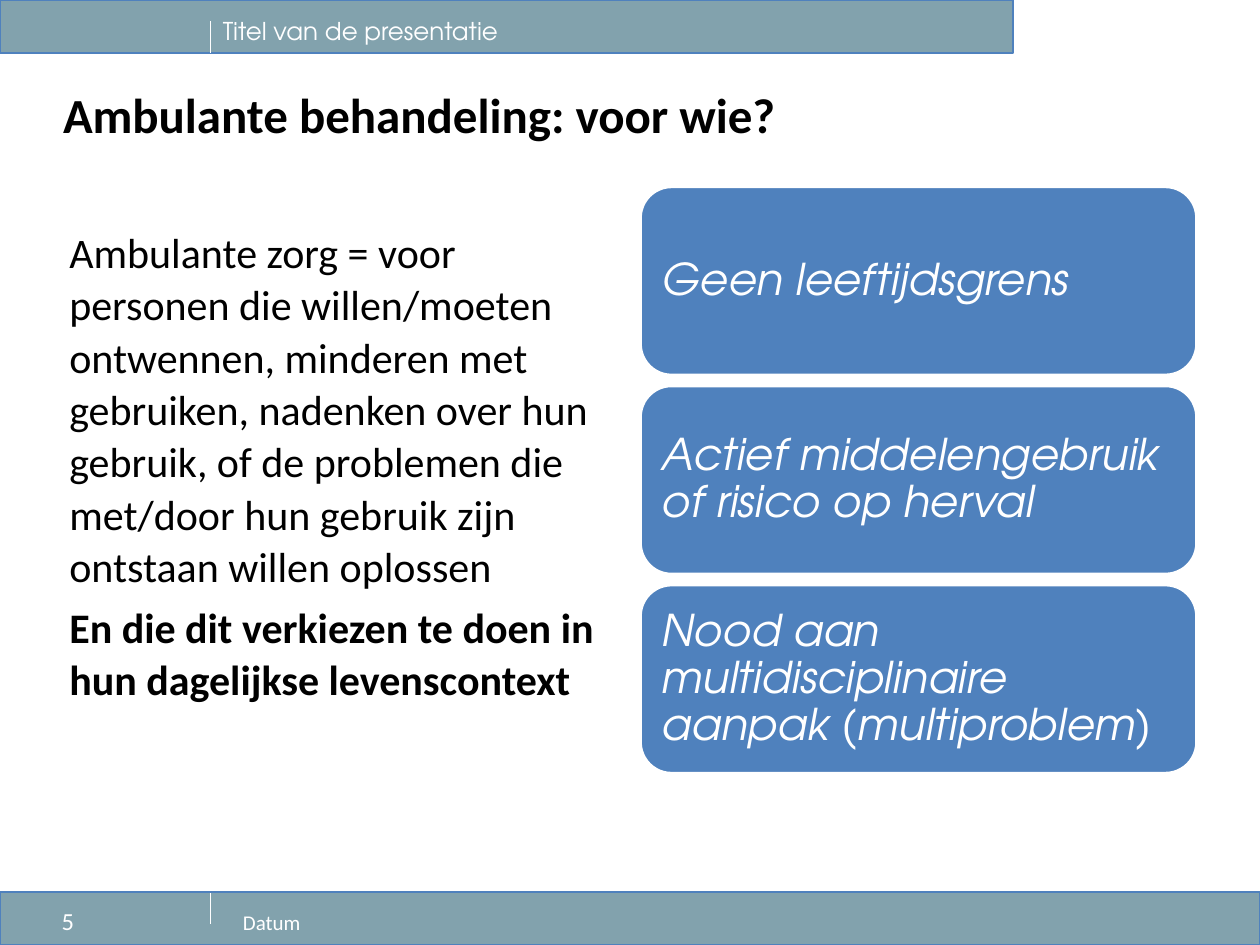
from pptx import Presentation
from pptx.dml.color import RGBColor as Rgb
from pptx.enum.shapes import MSO_CONNECTOR as Conn, MSO_SHAPE as Geo
from pptx.enum.text import MSO_ANCHOR as Anchor, MSO_AUTO_SIZE as Fit, PP_ALIGN as Align
from pptx.oxml.ns import qn
from pptx.util import Inches, Pt
from lxml.etree import SubElement

HUES = {"bar": "82A2AD", "blue": "4F81BD", "white": "FFFFFF", "black": "000000"}
SANS = "Calibri"
GEO = "TeX Gyre Adventor"


def hue(name):
    return Rgb.from_string(HUES[name])


def write(par, text, size=24, face=SANS, color="black", bold=False,
          slant=False, lead=1.0, before=0, after=0):
    props = par._p.get_or_add_pPr()
    props.set("marL", "0")
    props.set("indent", "0")
    SubElement(props, qn("a:buNone"))
    par.alignment = Align.LEFT
    par.line_spacing = lead
    par.space_before, par.space_after = Pt(before), Pt(after)
    run = par.add_run()
    run.text = text
    font = run.font
    font.name, font.size = face, Pt(size)
    font.bold, font.italic = bold, slant
    font.color.rgb = hue(color)


class Page:
    def __init__(self, slide):
        self.slide = slide
        self.items = slide.shapes

    def frame(self, shape, pad, anchor=Anchor.TOP, wrap=True):
        frame = shape.text_frame
        frame.auto_size = Fit.NONE
        frame.word_wrap = wrap
        frame.vertical_anchor = anchor
        (frame.margin_left, frame.margin_top,
         frame.margin_right, frame.margin_bottom) = map(Inches, pad)
        return frame

    def block(self, geo, box, fill, line, width):
        shape = self.items.add_shape(geo, *map(Inches, box))
        shape.shadow.inherit = False
        shape.fill.solid()
        shape.fill.fore_color.rgb = hue(fill)
        shape.line.color.rgb = hue(line)
        shape.line.width = Pt(width)
        return shape

    def rule(self, ends, color, width):
        line = self.items.add_connector(Conn.STRAIGHT, *map(Inches, ends))
        line.line.color.rgb = hue(color)
        line.line.width = Pt(width)
        SubElement(line._element.spPr, qn("a:effectLst"))

    def label(self, text, box, pad, wrap=True, **style):
        shape = self.items.add_textbox(*map(Inches, box))
        frame = self.frame(shape, pad, wrap=wrap)
        write(frame.paragraphs[0], text, color="white", **style)

    def holder(self, index, box, pad, anchor=Anchor.TOP):
        shape = self.slide.placeholders[index]
        shape.left, shape.top, shape.width, shape.height = map(Inches, box)
        return self.frame(shape, pad, anchor)

    def card(self, text, box):
        shape = self.block(Geo.ROUNDED_RECTANGLE, box, "blue", "white", 2)
        frame = self.frame(shape, [0.1] * 4, Anchor.MIDDLE)
        write(frame.paragraphs[0], text, 25, GEO, "white", slant=True, lead=0.9)


def main():
    deck = Presentation()
    deck.slide_width, deck.slide_height = Inches(10), Inches(7.5)
    page = Page(deck.slides.add_slide(deck.slide_layouts[1]))

    for box in ((0, 7.08, 10, 0.42), (0, 0, 8.04, 0.42)):
        page.block(Geo.RECTANGLE, box, "bar", "blue", 0.75)
    for low, high in ((0.42, 0.17), (7.33, 7.08)):
        page.rule((1.67, low, 1.67, high), "white", 0.75)
    page.rule((0, 7.08, 10, 7.08), "blue", 0.5)

    page.label("Titel van de presentatie", (1.67, 0.08, 2.43, 0.34),
               (0.1, 0.05, 0.1, 0.05), wrap=False, size=14, face=GEO)
    page.label("Datum", (1.83, 7.15, 6, 0.35), (0.1, 0.07, 0.1, 0.05),
               size=12, after=6)
    page.label("5", (0.33, 7.15, 1.33, 0.35), (0.16, 0.07, 0.1, 0.05),
               size=14, lead=0.9, after=6)

    title = page.holder(0, (0.5, 0.64, 7.16, 0.55), (0, 0.05, 0, 0.05), Anchor.BOTTOM)
    write(title.paragraphs[0], "Ambulante behandeling: voor wie?", 28,
          bold=True, lead=0.9)

    body = page.holder(1, (0.5, 1.73, 4.42, 4.97), [0.05] * 4)
    write(body.paragraphs[0],
          "Ambulante zorg = voor personen die willen/moeten ontwennen, "
          "minderen met gebruiken, nadenken over hun gebruik, of de problemen "
          "die met/door hun gebruik zijn ontstaan willen oplossen", lead=1.04)
    write(body.add_paragraph(),
          "En die dit verkiezen te doen in hun dagelijkse levenscontext",
          bold=True, lead=1.04, before=4.8)

    cards = ("Geen leeftijdsgrens",
             "Actief middelengebruik of risico op herval",
             "Nood aan multidisciplinaire aanpak (multiproblem)")
    for row, text in enumerate(cards):
        page.card(text, (5.08, 1.48 + row * 1.58, 4.42, 1.5))

    deck.save("out.pptx")


if __name__ == "__main__":
    main()
